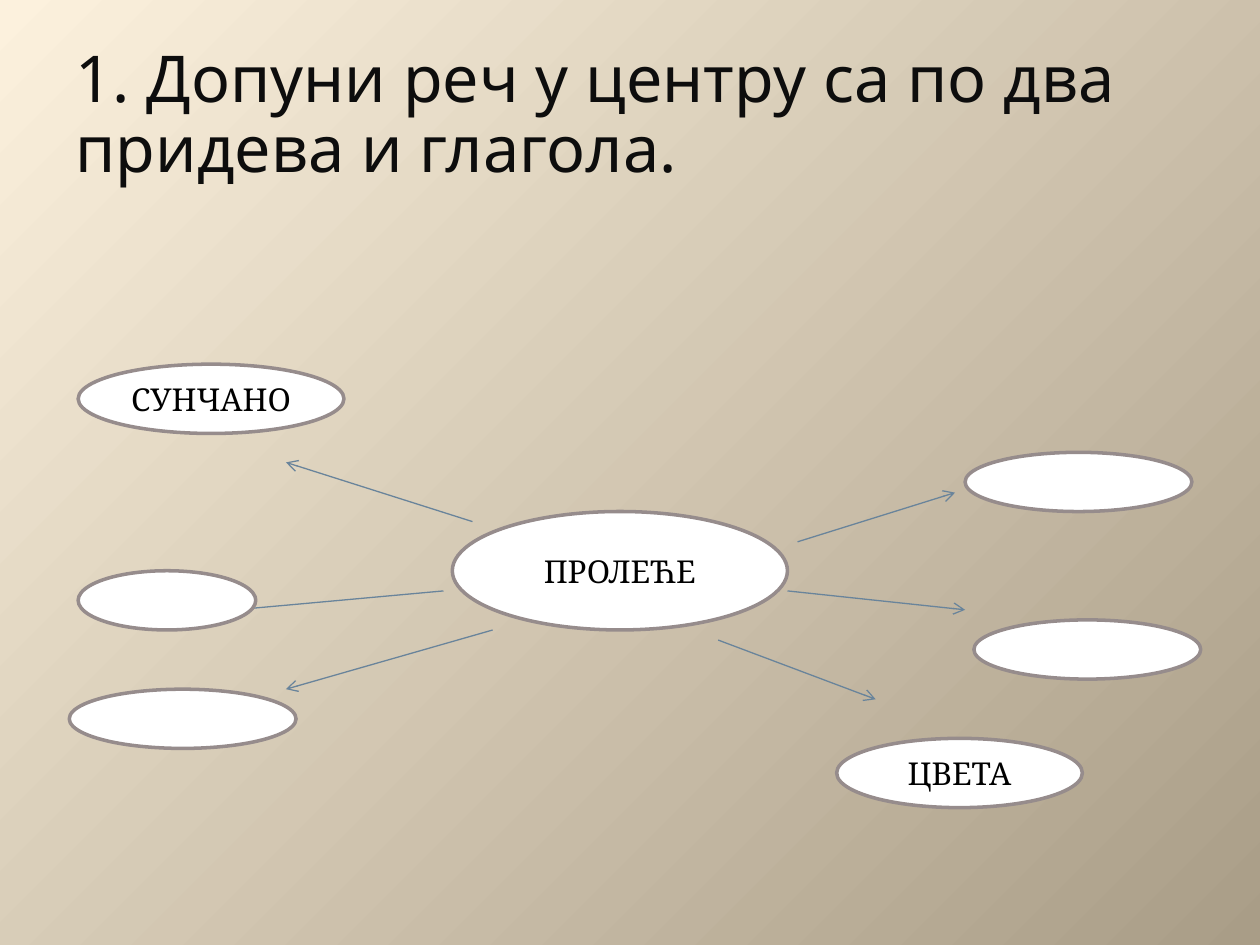
"""Build a word-web slide about spring with adjectives and verbs to fill in."""
from dataclasses import dataclass

from lxml import etree
from pptx import Presentation
from pptx.dml.color import RGBColor
from pptx.enum.shapes import MSO_CONNECTOR, MSO_SHAPE
from pptx.enum.text import MSO_ANCHOR, MSO_AUTO_SIZE, PP_ALIGN
from pptx.oxml.ns import qn
from pptx.slide import Slide
from pptx.util import Inches, Pt

STRAIGHT = MSO_CONNECTOR.STRAIGHT
OVAL = MSO_SHAPE.OVAL
MIDDLE = MSO_ANCHOR.MIDDLE
NO_AUTOFIT = MSO_AUTO_SIZE.NONE
LEFT = PP_ALIGN.LEFT
CENTER = PP_ALIGN.CENTER
TITLE_ONLY_LAYOUT = 5


@dataclass(frozen=True)
class Theme:
    background_start: RGBColor = RGBColor.from_string("FCF1DD")
    background_end: RGBColor = RGBColor.from_string("A99D87")
    title_color: RGBColor = RGBColor.from_string("0D0D0D")
    word_color: RGBColor = RGBColor.from_string("000000")
    bubble_fill: RGBColor = RGBColor.from_string("FFFFFF")
    bubble_line: RGBColor = RGBColor.from_string("968C8C")
    arrow_color: RGBColor = RGBColor.from_string("69849B")
    title_font: str = "Noto Sans"
    word_font: str = "Cambria"
    title_size: float = 36.9
    word_size: float = 18
    bubble_line_width: float = 2
    arrow_width: float = 0.75


@dataclass(frozen=True)
class Bubble:
    left: float
    top: float
    width: float = 1.8
    height: float = 0.47
    word: str = ""


@dataclass(frozen=True)
class Arrow:
    start_x: float
    start_y: float
    end_x: float
    end_y: float


THEME = Theme()
TITLE = "1. Допуни реч у центру са по два придева и глагола."
ARROWS = (
    Arrow(6.33, 4.3, 7.58, 3.91),
    Arrow(6.25, 4.69, 7.66, 4.84),
    Arrow(5.7, 5.08, 6.95, 5.55),
    Arrow(3.75, 4.14, 2.27, 3.67),
    Arrow(3.52, 4.69, 1.87, 4.84),
    Arrow(3.91, 5, 2.27, 5.47),
)
BUBBLES = (
    Bubble(3.59, 4.06, 2.66, 0.94, "ПРОЛЕЋЕ"),
    Bubble(7.66, 3.59),
    Bubble(7.73, 4.92),
    Bubble(6.64, 5.86, 1.95, 0.55, "ЦВЕТА"),
    Bubble(0.62, 2.89, 2.11, 0.55, "СУНЧАНО"),
    Bubble(0.62, 4.53, 1.41),
    Bubble(0.55, 5.47),
)


def paint_background(slide: Slide) -> None:
    """Fill the background with a diagonal gradient."""
    fill = slide.background.fill
    fill.gradient()
    fill.gradient_angle = 315
    colors = (THEME.background_start, THEME.background_end)
    for position, (stop, color) in enumerate(zip(fill.gradient_stops, colors)):
        stop.position = position
        stop.color.rgb = color


def write_title(slide: Slide) -> None:
    """Place and format the title placeholder."""
    title = slide.shapes.title
    title.left, title.top = Inches(0.5), Inches(0.3)
    title.width, title.height = Inches(9), Inches(1.25)
    frame = title.text_frame
    frame.text = TITLE
    frame.word_wrap = True
    frame.auto_size = NO_AUTOFIT
    frame.vertical_anchor = MIDDLE
    paragraph = frame.paragraphs[0]
    paragraph.alignment = LEFT
    paragraph.line_spacing = 0.9
    font = paragraph.runs[0].font
    font.name = THEME.title_font
    font.size = Pt(THEME.title_size)
    font.color.rgb = THEME.title_color


def draw_arrow(slide: Slide, arrow: Arrow) -> None:
    """Draw a thin line with an open arrowhead at its end."""
    connector = slide.shapes.add_connector(
        STRAIGHT, Inches(arrow.start_x), Inches(arrow.start_y),
        Inches(arrow.end_x), Inches(arrow.end_y),
    )
    connector.line.color.rgb = THEME.arrow_color
    connector.line.width = Pt(THEME.arrow_width)
    etree.SubElement(connector.line._get_or_add_ln(), qn("a:tailEnd"), type="arrow")
    etree.SubElement(connector._element.spPr, qn("a:effectLst"))


def draw_bubble(slide: Slide, bubble: Bubble) -> None:
    """Draw an ellipse with its word, if it has one."""
    shape = slide.shapes.add_shape(
        OVAL, Inches(bubble.left), Inches(bubble.top),
        Inches(bubble.width), Inches(bubble.height),
    )
    shape.shadow.inherit = False
    shape.fill.solid()
    shape.fill.fore_color.rgb = THEME.bubble_fill
    shape.line.color.rgb = THEME.bubble_line
    shape.line.width = Pt(THEME.bubble_line_width)
    if not bubble.word:
        return
    frame = shape.text_frame
    frame.text = bubble.word
    frame.word_wrap = False
    frame.vertical_anchor = MIDDLE
    paragraph = frame.paragraphs[0]
    paragraph.alignment = CENTER
    font = paragraph.runs[0].font
    font.name = THEME.word_font
    font.size = Pt(THEME.word_size)
    font.color.rgb = THEME.word_color


def main() -> None:
    """Build and save the presentation."""
    presentation = Presentation()
    presentation.slide_width = Inches(10)
    presentation.slide_height = Inches(7.5)
    slide = presentation.slides.add_slide(presentation.slide_layouts[TITLE_ONLY_LAYOUT])
    paint_background(slide)
    write_title(slide)
    for arrow in ARROWS:
        draw_arrow(slide, arrow)
    for bubble in BUBBLES:
        draw_bubble(slide, bubble)
    presentation.save("out.pptx")


if __name__ == "__main__":
    main()
